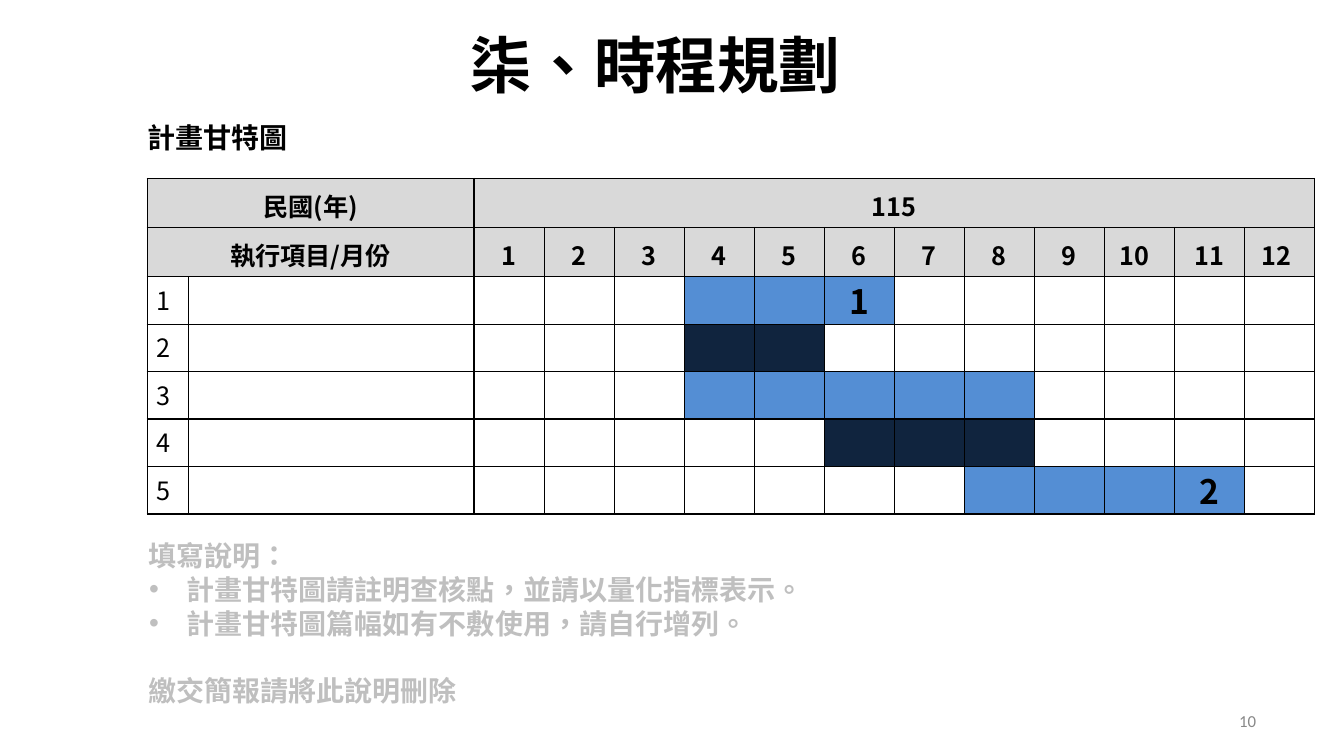
"""Build the project schedule slide with its Gantt table."""
import pptx
import pptx.util
import pptx.dml.color
import pptx.enum.lang
import pptx.enum.text
import pptx.oxml
import pptx.oxml.ns

WIDE, HIGH = pptx.util.Inches(13.33), pptx.util.Inches(7.5)
LEFT = 10.95
MONTHS = 12
HEAD, ROW = 6.5, 6.28
COLS = [3.08, 21.25] + [5.21] * MONTHS
HUES = {"ink": "000000", "head": "D9D9D9", "blue": "548ED4",
        "navy": "10243E", "note": "BFBFBF", "page": "888888"}
CJK = "Noto Sans CJK SC"
BARS = [("blue", 4, 6, "1"), ("navy", 4, 5, ""), ("blue", 4, 8, ""),
        ("navy", 6, 8, ""), ("blue", 8, 11, "2")]
SHIFT = {10: 0.15, 12: 0.17}
NOTES = [("填寫說明：", "Calibri", False, 0),
         ("計畫甘特圖請註明查核點，並請以量化指標表示。", CJK, True, 0.2),
         ("計畫甘特圖篇幅如有不敷使用，請自行增列。", CJK, True, 0.2),
         ("繳交簡報請將此說明刪除", "Calibri", False, 24.4)]
ALIGN = pptx.enum.text.PP_ALIGN
ANCHOR = pptx.enum.text.MSO_ANCHOR


def across(share):
    """Turn a percentage of the slide's width into a length."""
    return int(WIDE * share / 100)


def down(share):
    """Turn a percentage of the slide's height into a length."""
    return int(HIGH * share / 100)


def hue(name):
    """Look up a colour by name."""
    return pptx.dml.color.RGBColor.from_string(HUES[name])


def node(parent, tag, **attrs):
    """Append a drawing element to a parent."""
    child = pptx.oxml.parse_xml(f"<a:{tag} {pptx.oxml.ns.nsdecls('a')}/>")
    for key, value in attrs.items():
        child.set(key, str(value))
    parent.append(child)
    return child


def write(para, text, size, face=CJK, ink="ink", bold=True):
    """Add one formatted run to a paragraph."""
    run = para.add_run()
    run.text = text
    font = run.font
    font.size, font.bold, font.name = pptx.util.Pt(size), bold, face
    font.color.rgb = hue(ink)
    font.language_id = pptx.enum.lang.MSO_LANGUAGE_ID.TRADITIONAL_CHINESE
    latin = font._element.find(pptx.oxml.ns.qn("a:latin"))
    latin.addnext(node(font._element, "ea", typeface=CJK))


def frame(shape, area, anchor=ANCHOR.MIDDLE):
    """Place a text shape, clear its margins and return its frame."""
    x, y, w, h = area
    shape.left, shape.top = across(x), down(y)
    shape.width, shape.height = across(w), down(h)
    text = shape.text_frame
    text.word_wrap = True
    text.auto_size = pptx.enum.text.MSO_AUTO_SIZE.NONE
    text.vertical_anchor = anchor
    text.margin_left = text.margin_right = 0
    text.margin_top = text.margin_bottom = 0
    return text


def label(shape, area, text, size, **style):
    """Fill a shape with a single left-aligned line."""
    para = frame(shape, area).paragraphs[0]
    para.alignment = ALIGN.LEFT
    write(para, text, size, **style)


def notes(shape):
    """Write the filling notes into the body placeholder."""
    text = frame(shape, (LEFT, 71.2, 64.89, 22.8), ANCHOR.TOP)
    for i, (line, face, listed, gap) in enumerate(NOTES):
        para = text.add_paragraph() if i else text.paragraphs[0]
        props = para._p.get_or_add_pPr()
        hang = pptx.util.Inches(0.37) if listed else 0
        props.set("marL", str(pptx.util.Inches(0.39 if listed else 0.01)))
        props.set("indent", str(-hang))
        if listed:
            node(props, "buFont", typeface="Arial")
            node(props, "buChar", char="•")
        else:
            node(props, "buNone")
        para.alignment = ALIGN.LEFT
        para.line_spacing = pptx.util.Pt(24)
        para.space_before = pptx.util.Pt(gap)
        write(para, line, 20, face, "note")


def paint(cell, fill=None):
    """Give a cell its fill, black borders and no margins."""
    cell.margin_left = cell.margin_right = 0
    cell.margin_top = cell.margin_bottom = 0
    props = cell._tc.get_or_add_tcPr()
    for side in ("lnL", "lnR", "lnT", "lnB"):
        edge = node(props, side, w=pptx.util.Pt(1))
        node(node(edge, "solidFill"), "srgbClr", val=HUES["ink"])
    if fill:
        cell.fill.solid()
        cell.fill.fore_color.rgb = hue(fill)
    else:
        cell.fill.background()


def enter(cell, text, size=18, top=0.09, indent=0, space=1.0, bold=True):
    """Write a cell's text, centred unless it is indented."""
    cell.margin_top = pptx.util.Inches(top)
    para = cell.text_frame.paragraphs[0]
    para.alignment = ALIGN.LEFT if indent else ALIGN.CENTER
    para.line_spacing = space
    if indent:
        para._p.get_or_add_pPr().set("marL", str(pptx.util.Inches(indent)))
    write(para, text, size, bold=bold)


def gantt(slide):
    """Draw the schedule as a table of months and tasks."""
    rows = [HEAD] * 2 + [ROW] * len(BARS)
    grid = slide.shapes.add_table(
        len(rows), len(COLS), across(LEFT), down(23.6),
        across(sum(COLS)), down(sum(rows))).table
    grid.first_row = grid.horz_banding = False
    for col, share in zip(grid.columns, COLS):
        col.width = across(share)
    for row, share in zip(grid.rows, rows):
        row.height = down(share)
    for r in range(len(rows)):
        for c in range(len(COLS)):
            fill = "head" if r < 2 else None
            if r > 1:
                tone, start, end, _ = BARS[r - 2]
                fill = tone if start <= c - 1 <= end else None
            paint(grid.cell(r, c), fill)
    for r, text in enumerate(("民國(年)", "執行項目/月份")):
        grid.cell(r, 0).merge(grid.cell(r, 1))
        enter(grid.cell(r, 0), text)
    grid.cell(0, 2).merge(grid.cell(0, MONTHS + 1))
    enter(grid.cell(0, 2), "115")
    for month in range(1, MONTHS + 1):
        enter(grid.cell(1, month + 1), str(month), indent=SHIFT.get(month, 0))
    for i, (_, _, end, mark) in enumerate(BARS):
        cell = grid.cell(i + 2, 0)
        cell.vertical_anchor = ANCHOR.MIDDLE
        enter(cell, str(i + 1), top=0, indent=0.09, space=0.9, bold=False)
        if mark:
            enter(grid.cell(i + 2, end + 1), mark, 24, 0.03, space=0.9)


def main():
    """Build and save the slide."""
    deck = pptx.Presentation()
    deck.slide_width, deck.slide_height = WIDE, HIGH
    slide = deck.slides.add_slide(deck.slide_layouts[1])
    label(slide.shapes.title, (35.03, 3.47, 61.89, 10), "柒、時程規劃", 44)
    label(slide.shapes.add_textbox(0, 0, 0, 0),
          (LEFT, 15.73, 14.85, 4.8), "計畫甘特圖", 20)
    gantt(slide)
    notes(slide.placeholders[1])
    label(slide.shapes.add_textbox(0, 0, 0, 0), (92.2, 94.27, 2.4, 2.27),
          "10", 12, face="Calibri", ink="page", bold=False)
    deck.save("out.pptx")


if __name__ == "__main__":
    main()
